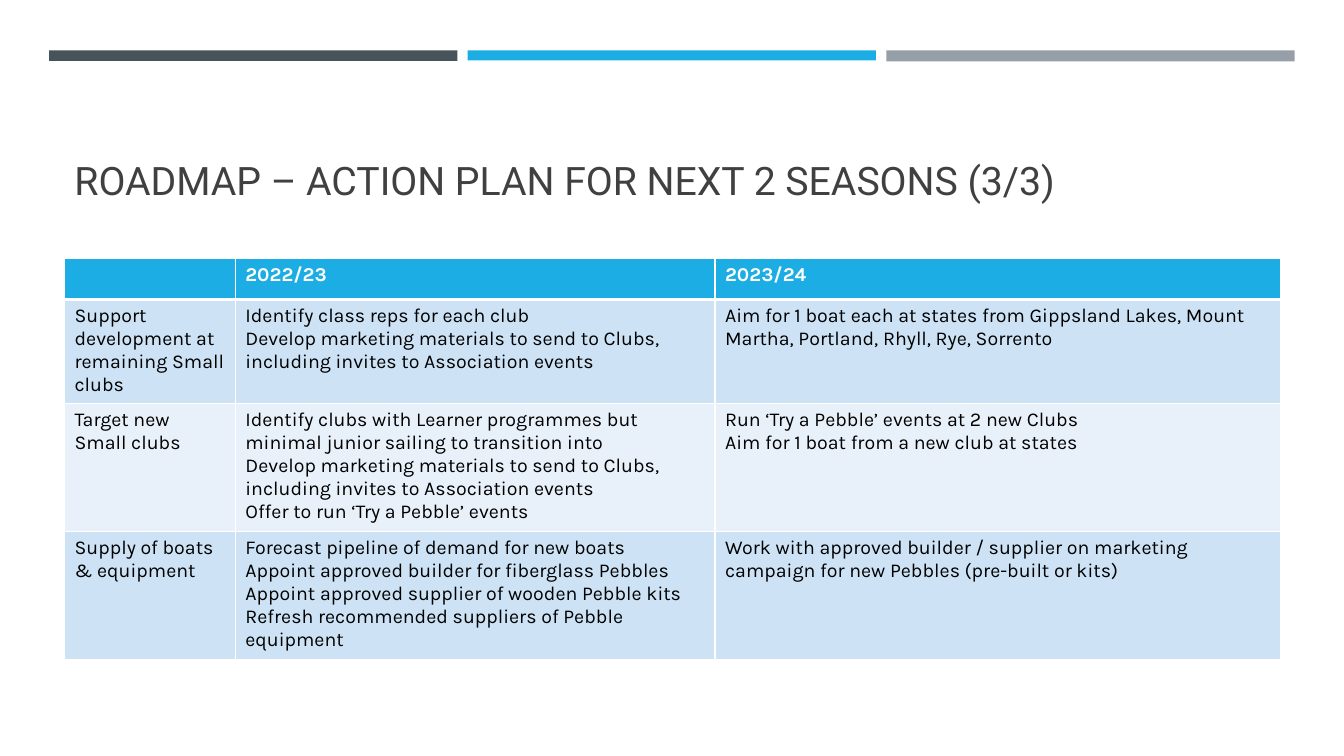
"""Build the roadmap slide with the action plan for the next two seasons."""
from typing import NamedTuple

from lxml.etree import SubElement
from pptx import Presentation
from pptx.dml.color import RGBColor
from pptx.enum.shapes import MSO_SHAPE as SHAPE
from pptx.enum.text import MSO_ANCHOR as ANCHOR
from pptx.oxml.ns import qn
from pptx.util import Pt

LEFT, WIDTH = 46.1, 868.6
COLUMNS = (122, 342.7, 403.9)
ROW_HEIGHT, TABLE_HEIGHT = 29.4, 269.3
BLUE, WHITE = "1CADE4", "FFFFFF"


class Bar(NamedTuple):
    color: str
    height: float


class Row(NamedTuple):
    fill: str
    cells: tuple[str, str, str]


BARS = (Bar("465359", 7.5), Bar(BLUE, 7.2), Bar("969FA7", 7.8))
TITLE = {"size": Pt(28), "name": "Roboto", "bold": False}
HEADER = {"size": Pt(14), "name": "Karla", "bold": True}
BODY = {**HEADER, "bold": False}
MATERIALS = ("Develop marketing materials to send to Clubs, "
             "including invites to Association events")
ROWS = (
    Row(BLUE, ("", "2022/23", "2023/24")),
    Row("CDE3F5", (
        "Support development at remaining Small clubs",
        f"Identify class reps for each club\n{MATERIALS}",
        "Aim for 1 boat each at states from Gippsland Lakes, Mount Martha, "
        "Portland, Rhyll, Rye, Sorrento")),
    Row("E8F1FA", (
        "Target new Small clubs",
        "Identify clubs with Learner programmes but minimal junior sailing "
        f"to transition into\n{MATERIALS}\nOffer to run ‘Try a Pebble’ events",
        "Run ‘Try a Pebble’ events at 2 new Clubs\n"
        "Aim for 1 boat from a new club at states")),
    Row("CDE3F5", (
        "Supply of boats & equipment",
        "Forecast pipeline of demand for new boats\n"
        "Appoint approved builder for fiberglass Pebbles\n"
        "Appoint approved supplier of wooden Pebble kits\n"
        "Refresh recommended suppliers of Pebble equipment",
        "Work with approved builder / supplier on marketing campaign "
        "for new Pebbles (pre-built or kits)")),
)


def rgb(color: str) -> RGBColor:
    return RGBColor.from_string(color)


def paint(target, color: str) -> None:
    target.fill.solid()
    target.fill.fore_color.rgb = rgb(color)


def write(tf, text: str, fmt: dict, color: str) -> None:
    tf.text = text
    for p in tf.paragraphs:
        for font in [r.font for r in p.runs] or [p.font]:
            for key, value in fmt.items():
                setattr(font, key, value)
            font.color.rgb = rgb(color)


def draw_bar(s, index: int, bar: Bar) -> None:
    sp = s.shapes.add_shape(SHAPE.RECTANGLE, Pt(35.1 + 299 * index), Pt(36),
                            Pt(291.6), Pt(bar.height))
    sp.shadow.inherit = False
    sp.line.fill.background()
    paint(sp, bar.color)


def draw_title(s, text: str) -> None:
    tf = s.shapes.add_textbox(Pt(LEFT), Pt(55.4), Pt(WIDTH), Pt(93.6)).text_frame
    tf.word_wrap = True
    tf.vertical_anchor = ANCHOR.BOTTOM
    write(tf, text, TITLE, "404040")


def set_borders(cell, top: float, bottom: float) -> None:
    tc_pr = cell._tc.get_or_add_tcPr()
    for side, width in {"L": 1, "R": 1, "T": top, "B": bottom}.items():
        ln = SubElement(tc_pr, qn(f"a:ln{side}"), w=str(Pt(width)))
        SubElement(SubElement(ln, qn("a:solidFill")), qn("a:srgbClr"), val=WHITE)


def draw_table(s, rows: tuple[Row, ...]) -> None:
    frame = s.shapes.add_table(len(rows), len(COLUMNS), Pt(LEFT), Pt(184.6),
                               Pt(WIDTH), Pt(TABLE_HEIGHT))
    table = frame.table
    for column, width in zip(table.columns, COLUMNS):
        column.width = Pt(width)
    for i, row in enumerate(rows):
        table.rows[i].height = Pt(ROW_HEIGHT)
        fmt, color = (BODY, "000000") if i else (HEADER, WHITE)
        for j, text in enumerate(row.cells):
            cell = table.cell(i, j)
            set_borders(cell, 3 if i == 1 else 1, 1 if i else 3)
            paint(cell, row.fill)
            write(cell.text_frame, text, fmt, color)
    frame.height = Pt(TABLE_HEIGHT)


def main() -> None:
    prs = Presentation()
    prs.slide_width, prs.slide_height = Pt(960), Pt(540)
    s = prs.slides.add_slide(prs.slide_layouts[6])
    for index, bar in enumerate(BARS):
        draw_bar(s, index, bar)
    draw_title(s, "ROADMAP – ACTION PLAN FOR NEXT 2 SEASONS (3/3)")
    draw_table(s, ROWS)
    prs.save("out.pptx")


if __name__ == "__main__":
    main()
